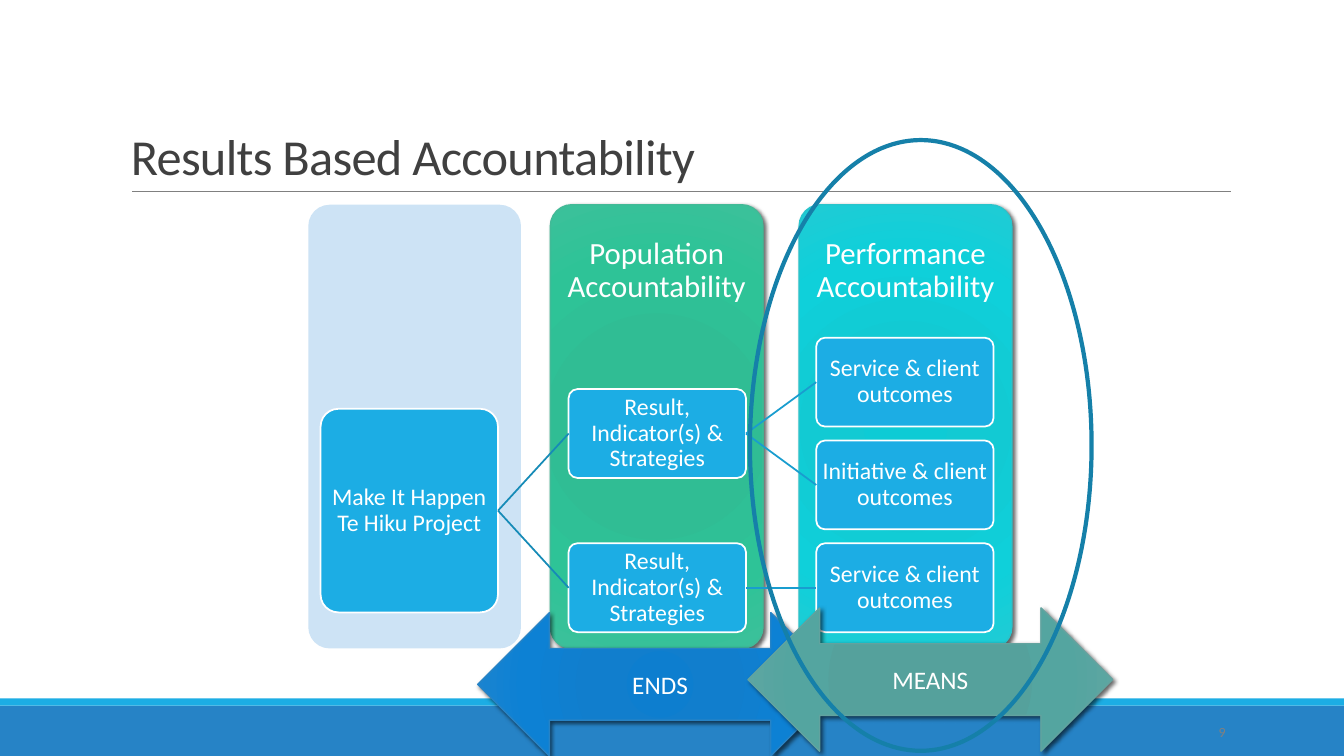
from dataclasses import dataclass
from lxml.etree import SubElement
from pptx import Presentation
from pptx.dml.color import RGBColor
from pptx.enum.shapes import MSO_CONNECTOR, MSO_SHAPE
from pptx.enum.text import MSO_ANCHOR, MSO_AUTO_SIZE, PP_ALIGN
from pptx.oxml import parse_xml
from pptx.oxml.ns import nsdecls, qn
from pptx.util import Cm, Pt


@dataclass(frozen=True)
class Theme:
    font: str = "Calibri"
    white: str = "FFFFFF"
    dark: str = "404040"
    gray: str = "808080"
    sky: str = "1CADE4"
    blue: str = "2683C6"
    pale: str = "CDE3F5"
    ring: str = "1580A9"
    near: str = "168BB7"
    far: str = "199DCF"
    # Four gradient stops, then the outline
    green: tuple = ("2DBE94", "30BD94", "2EC397", "3CC09A", "42BA97")
    aqua: tuple = ("0ECBD5", "12CAD3", "0FD0DA", "20CBD4", "28C4CC")
    ends: tuple = ("0D7ECF", "117ECD", "0D81D4", "1E84CE", "2683C6")
    means: tuple = ("52A19C", "55A19C", "54A5A0", "5FA6A2", "62A39F")
    title: int = 36
    head: int = 22
    arrow: int = 18
    body: int = 17
    page: int = 10


theme = Theme()
rgb = RGBColor.from_string

deck = Presentation()
deck.slide_width, deck.slide_height = Cm(33.87), Cm(19.05)
slide = deck.slides.add_slide(deck.slide_layouts[5])
shapes = slide.shapes


def add(kind, x, y, w, h, fill=None, line=None, width=1):
    """Add a shape; a tuple as fill gives a shaded, outlined, raised look."""
    shape = shapes.add_shape(kind, Cm(x), Cm(y), Cm(w), Cm(h))
    shape.shadow.inherit = False
    if kind == MSO_SHAPE.ROUNDED_RECTANGLE:
        shape.adjustments[0] = 0.1
    if fill is None:
        shape.fill.background()
    else:
        shape.fill.solid()
    if isinstance(fill, tuple):
        line = fill[4]
        stops = "".join(
            f'<a:gs pos="{pos}000"><a:srgbClr val="{tone}"/></a:gs>'
            for pos, tone in zip((0, 34, 70, 100), fill))
        props = shape.element.spPr
        props.replace(props.find(qn("a:solidFill")), parse_xml(
            f'<a:gradFill {nsdecls("a")}><a:gsLst>{stops}</a:gsLst>'
            '<a:path path="circle"><a:fillToRect l="100000" t="100000" '
            'r="100000" b="100000"/></a:path></a:gradFill>'))
        props.find(qn("a:effectLst")).append(parse_xml(
            f'<a:outerShdw {nsdecls("a")} blurRad="{Pt(3)}" dist="{Pt(2)}" '
            'dir="2700000" rotWithShape="0"><a:srgbClr val="000000">'
            '<a:alpha val="60000"/></a:srgbClr></a:outerShdw>'))
    elif fill:
        shape.fill.fore_color.rgb = rgb(fill)
    if line:
        shape.line.color.rgb = rgb(line)
        shape.line.width = Pt(width)
    else:
        shape.line.fill.background()
    return shape


def write(shape, text, size, color=theme.white, align=PP_ALIGN.CENTER,
          pad=(0.25, 0.13, 0.25, 0.13), space=1.0, anchor=MSO_ANCHOR.MIDDLE):
    """Set and format text; pad is left, top, right, bottom in cm."""
    frame = shape.text_frame
    frame.text = text
    frame.word_wrap = True
    frame.auto_size = MSO_AUTO_SIZE.NONE
    frame.vertical_anchor = anchor
    (frame.margin_left, frame.margin_top,
     frame.margin_right, frame.margin_bottom) = map(Cm, pad)
    para = frame.paragraphs[0]
    para.alignment = align
    para.line_spacing = space
    font = para.runs[0].font
    font.name, font.size = theme.font, Pt(size)
    font.color.rgb = rgb(color)
    return para.runs[0]


# Bottom bands, title and rule
add(MSO_SHAPE.RECTANGLE, 0, 17.78, 33.87, 1.27, theme.blue)
add(MSO_SHAPE.RECTANGLE, 0, 17.6, 33.87, 0.18, theme.sky)
title = shapes.title
title.left, title.top, title.width, title.height = map(
    Cm, (3.05, 0.79, 27.94, 4.03))
run = write(title, "Results Based Accountability", theme.title, theme.dark,
            PP_ALIGN.LEFT, space=0.85, anchor=MSO_ANCHOR.BOTTOM)
run.font._element.set("spc", "-50")
rule = shapes.add_connector(
    MSO_CONNECTOR.STRAIGHT, Cm(3.33), Cm(4.83), Cm(31.01), Cm(4.83))
rule.line.color.rgb = rgb(theme.gray)
rule.line.width = Pt(0.5)
SubElement(rule.element.spPr, qn("a:effectLst"))

# Column panels
panels = [
    (20.14, theme.aqua, "Performance Accountability"),
    (13.87, theme.green, "Population Accountability"),
    (7.77, theme.pale, ""),
]
for x, fill, text in panels:
    panel = add(MSO_SHAPE.ROUNDED_RECTANGLE, x, 5.16, 5.36, 11.18, fill)
    if text:
        write(panel, text, theme.head, pad=(0.2, 0.27, 0.2, 8.1), space=0.9)

# Tree boxes: key, column, row, height, text
cols = (8.08, 14.33, 20.57)
top, step, high = 8.51, 2.59, 2.24
goal = "Result, Indicator(s) & Strategies"
service = "Service & client outcomes"
nodes = [
    ("root", 0, 1.25, 5.13, "Make It Happen Te Hiku Project"),
    ("upper", 1, 0.5, high, goal),
    ("lower", 1, 2, high, goal),
    ("first", 2, 0, high, service),
    ("second", 2, 1, high, "Initiative & client outcomes"),
    ("third", 2, 2, high, service),
]
boxes = {}
for key, col, row, tall, text in nodes:
    y = top + row * step + (high - tall) / 2
    boxes[key] = add(MSO_SHAPE.ROUNDED_RECTANGLE, cols[col], y, 4.47, tall,
                     theme.sky, theme.white, 1.25)
    write(boxes[key], text, theme.body, pad=(0.03,) * 4, space=0.9)

links = [
    ("root", "upper", theme.near), ("root", "lower", theme.near),
    ("upper", "first", theme.far), ("upper", "second", theme.far),
    ("lower", "third", theme.far),
]
for start, end, color in links:
    link = shapes.add_connector(MSO_CONNECTOR.STRAIGHT, 0, 0, 0, 0)
    link.begin_connect(boxes[start], 3)
    link.end_connect(boxes[end], 1)
    link.line.color.rgb = rgb(color)
    link.line.width = Pt(1.25)
    SubElement(link.element.spPr, qn("a:effectLst"))

# Arrows, highlight ring and page number
for x, y, fill, text in ((12.04, 15.44, theme.ends, "ENDS"),
                         (18.85, 15.32, theme.means, "MEANS")):
    arrow = add(MSO_SHAPE.LEFT_RIGHT_ARROW, x, y, 9.19, 3.61, fill)
    write(arrow, text, theme.arrow)
add(MSO_SHAPE.OVAL, 18.9, 3.53, 8.61, 15.39, line=theme.ring, width=3)
page = shapes.add_textbox(Cm(27.5), Cm(17.95), Cm(3.64), Cm(1.01))
write(page, "9", theme.page, theme.gray, PP_ALIGN.RIGHT)

deck.save("out.pptx")
